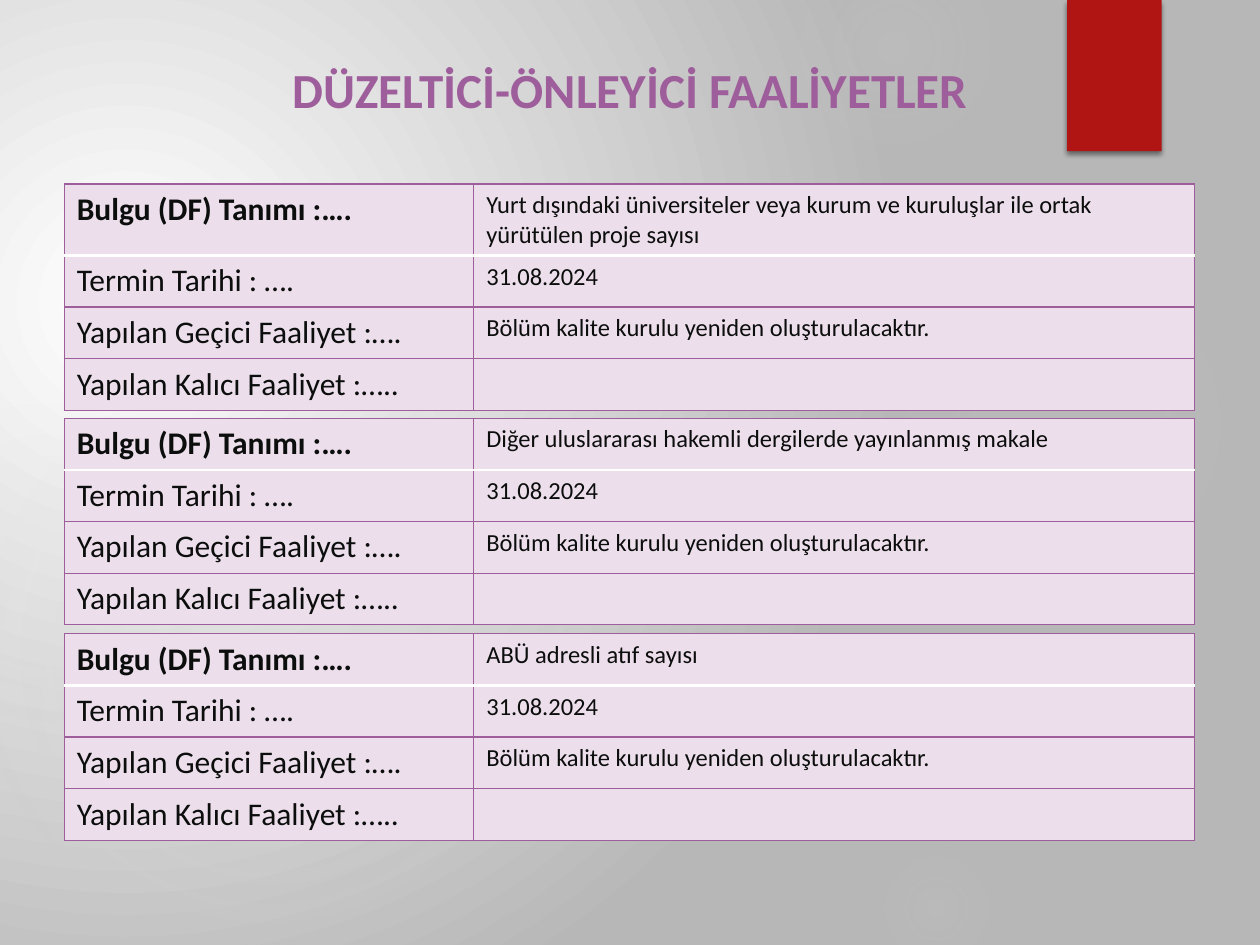
import pptx
import pptx.util
import pptx.oxml
import pptx.dml.color
import pptx.enum.shapes
import pptx.enum.text
from pptx.util import Inches

RGB = pptx.dml.color.RGBColor
WHITE = RGB(0xFF, 0xFF, 0xFF)
GREY = RGB(0xB7, 0xB7, 0xB7)
GLOW = RGB(0xD9, 0xD9, 0xD9)
RED = RGB(0xB0, 0x15, 0x13)
PURPLE = RGB(0x9E, 0x5E, 0x9B)
LILAC = RGB(0xEC, 0xDF, 0xEB)
INK = RGB(0x0C, 0x0D, 0x0D)
SHAPES = pptx.enum.shapes.MSO_SHAPE
NS = 'xmlns:a="http://schemas.openxmlformats.org/drawingml/2006/main"'

LABELS = ["Bulgu (DF) Tanımı :….", "Termin Tarihi : ….",
          "Yapılan Geçici Faaliyet :….", "Yapılan Kalıcı Faaliyet :….."]
DATE = "31.08.2024"
ACTION = "Bölüm kalite kurulu yeniden oluşturulacaktır."
# Finding and height of its row
FINDINGS = [
    ("Yurt dışındaki üniversiteler veya kurum ve kuruluşlar ile ortak "
     "yürütülen proje sayısı", 0.56),
    ("Diğer uluslararası hakemli dergilerde yayınlanmış makale", 0.41),
    ("ABÜ adresli atıf sayısı", 0.41),
]
ROW, GAP = 0.41, 0.07
# Left, top, size, then (position, opacity) stops in percent
GLOWS = [
    (6.89, 1.83, 3.08, [(0, 7), (36, 6), (69, 0)]),
    (6.22, -0.5, 1.75, [(0, 14), (36, 7), (73, 0)]),
    (6.89, 6.67, 1.08, [(0, 9), (36, 5), (66, 0)]),
    (-0.17, 2.92, 4.58, [(0, 11), (36, 10), (75, 0)]),
    (-0.92, 3.17, 2.58, [(0, 8), (36, 8), (72, 0)]),
]


def put_text(frame, text, size, color=INK, bold=False, align=None):
    par = frame.paragraphs[0]
    par.alignment = align
    run = par.add_run()
    run.text = text
    font = run.font
    font.name, font.size, font.bold = "Calibri", pptx.util.Pt(size), bold
    font.color.rgb = color
    return par


def fill_round(fill, root, stops, rect):
    """Fill with a circular gradient; stops are (position, colour, opacity)."""
    fill.solid()
    fill.fore_color.rgb = WHITE
    marks = "".join(
        f'<a:gs pos="{pos * 1000}"><a:srgbClr val="{color}">'
        f'<a:alpha val="{alpha * 1000}"/></a:srgbClr></a:gs>'
        for pos, color, alpha in stops)
    sides = " ".join(f'{k}="{v * 1000}"' for k, v in zip("ltrb", rect))
    old = root.xpath(".//a:solidFill")[0]
    old.getparent().replace(old, pptx.oxml.parse_xml(
        f'<a:gradFill {NS} rotWithShape="1"><a:gsLst>{marks}</a:gsLst>'
        f'<a:path path="circle"><a:fillToRect {sides}/></a:path></a:gradFill>'))


def add_plain(slide, kind, *box):
    shape = slide.shapes.add_shape(kind, *map(Inches, box))
    shape.shadow.inherit = False
    shape.line.fill.background()
    return shape


def draw_back(slide):
    fill_round(slide.background.fill, slide._element,
               [(0, WHITE, 100), (100, GREY, 100)], (45, 65, 125, 100))
    for left, top, size, stops in GLOWS:
        glow = add_plain(slide, SHAPES.OVAL, left, top, size, size)
        fill_round(glow.fill, glow._element.spPr,
                   [(pos, GLOW, alpha) for pos, alpha in stops], (50,) * 4)


def draw_ribbon(slide, *box):
    ribbon = add_plain(slide, SHAPES.RECTANGLE, *box)
    ribbon.fill.solid()
    ribbon.fill.fore_color.rgb = RED
    effects = ribbon._element.spPr.xpath("a:effectLst")[0]
    effects.append(pptx.oxml.parse_xml(
        f'<a:outerShdw {NS} blurRad="38100" dist="25400" dir="5400000" '
        'rotWithShape="0"><a:srgbClr val="000000"><a:alpha val="45000"/>'
        '</a:srgbClr></a:outerShdw>'))


def draw_title(slide, *box):
    frame = slide.shapes.add_textbox(*map(Inches, box)).text_frame
    frame.word_wrap = True
    par = put_text(frame, "DÜZELTİCİ-ÖNLEYİCİ FAALİYETLER", 28, PURPLE, True,
                   pptx.enum.text.PP_ALIGN.CENTER)
    par.line_spacing = 0.9
    par.space_after = pptx.util.Pt(6)


def style_cell(cell, row):
    """Fill the cell and rule its sides, with white under the first row."""
    cell.fill.solid()
    cell.fill.fore_color.rgb = LILAC
    white = {0: "B", 1: "T"}.get(row)
    for spot, side in enumerate("LRTB"):
        color, width = (WHITE, 1.5) if side == white else (PURPLE, 0.75)
        cell._tc.tcPr.insert(spot, pptx.oxml.parse_xml(
            f'<a:ln{side} {NS} w="{pptx.util.Pt(width)}"><a:solidFill>'
            f'<a:srgbClr val="{color}"/></a:solidFill></a:ln{side}>'))


def draw_table(slide, left, top, width, finding, first):
    """Add one finding's table and return its height."""
    height = first + 3 * ROW
    table = slide.shapes.add_table(
        4, 2, *map(Inches, (left, top, width, height))).table
    table.first_row = table.horz_banding = False
    table.columns[0].width = Inches(3.25)
    table.columns[1].width = Inches(width - 3.25)
    values = [finding, DATE, ACTION, ""]
    for row, (label, value) in enumerate(zip(LABELS, values)):
        table.rows[row].height = Inches(ROW if row else first)
        put_text(table.cell(row, 0).text_frame, label, 18, bold=row == 0)
        if value:
            put_text(table.cell(row, 1).text_frame, value, 14)
        for col in range(2):
            style_cell(table.cell(row, col), row)
    return height


def main():
    deck = pptx.Presentation()
    deck.slide_width, deck.slide_height = Inches(10), Inches(7.5)
    slide = deck.slides.add_slide(deck.slide_layouts[6])
    draw_back(slide)
    draw_ribbon(slide, 8.47, 0, 0.75, 1.2)
    draw_title(slide, 2.15, 0.48, 5.7, 0.53)
    top = 1.46
    for finding, first in FINDINGS:
        top += draw_table(slide, 0.51, top, 8.97, finding, first) + GAP
    deck.save("out.pptx")


if __name__ == "__main__":
    main()
